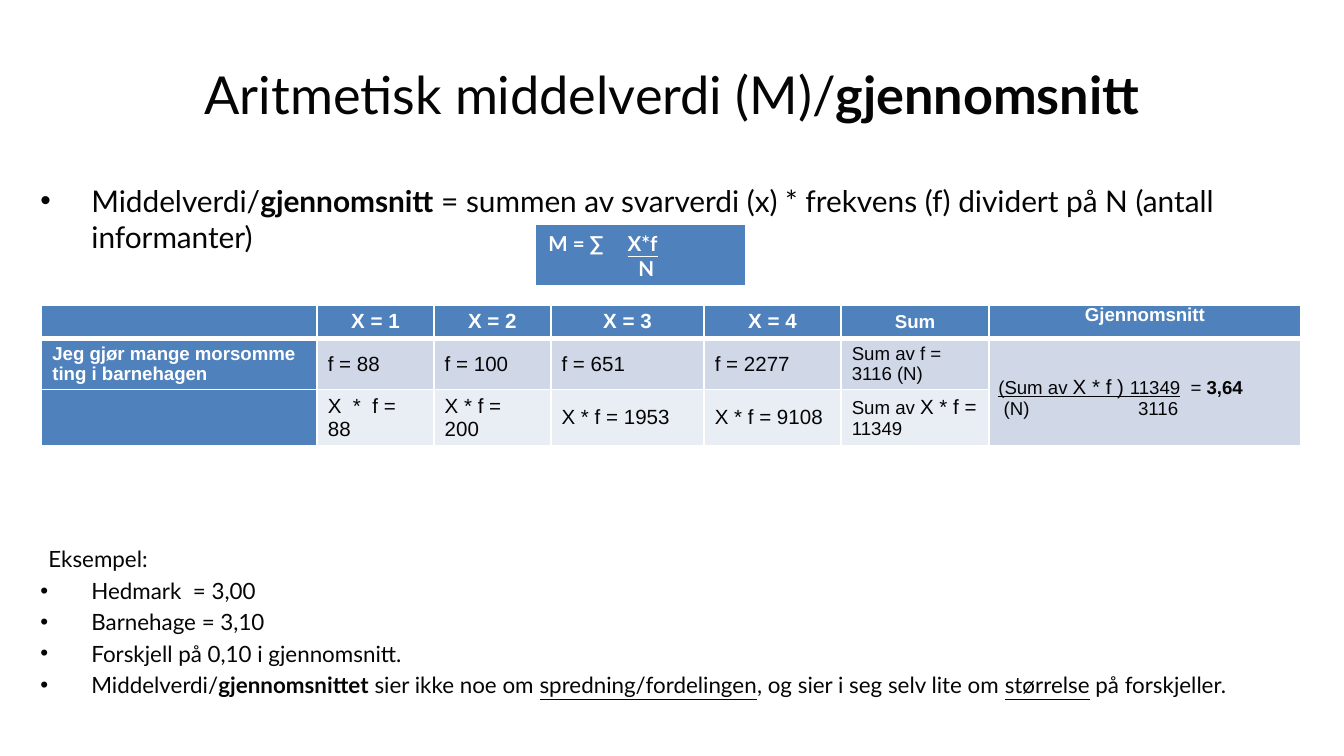
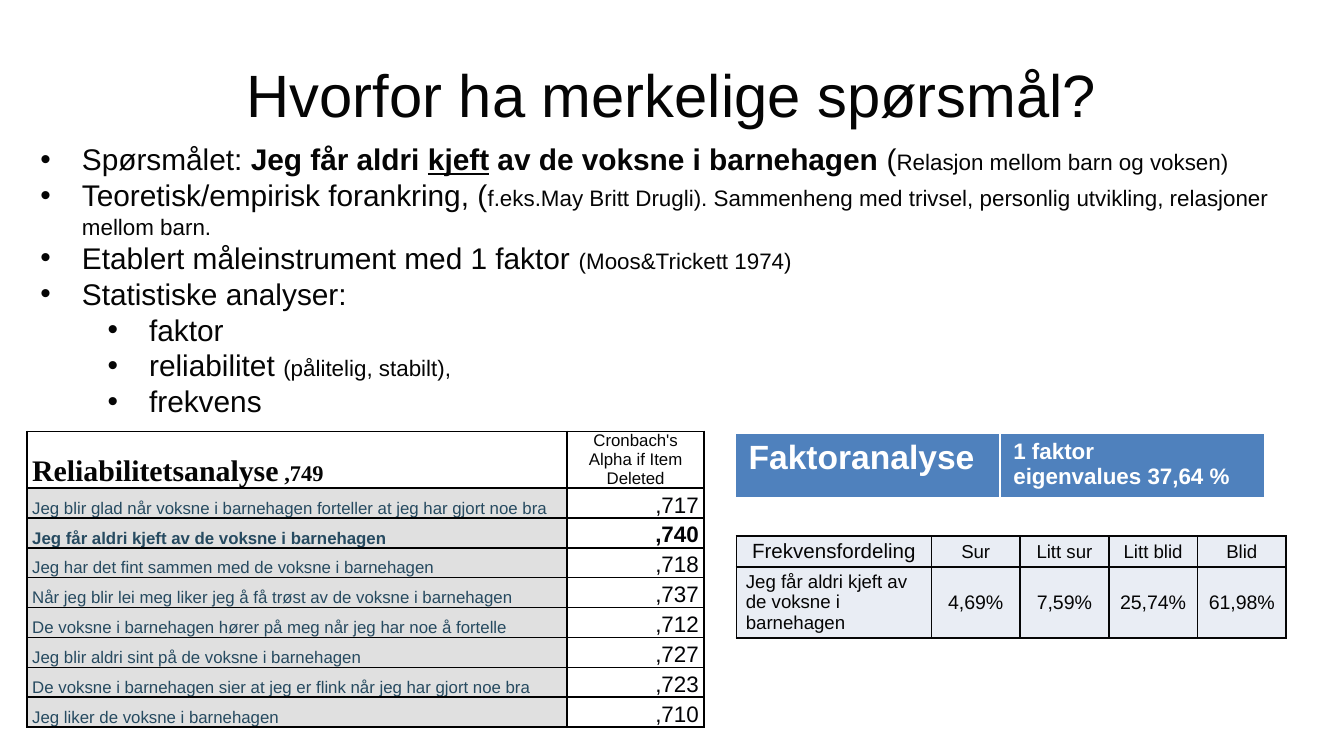
from dataclasses import dataclass

from lxml.etree import SubElement
from pptx import Presentation
from pptx.dml.color import RGBColor
from pptx.enum.text import MSO_ANCHOR, MSO_AUTO_SIZE, PP_ALIGN
from pptx.oxml.ns import qn
from pptx.util import Inches, Pt

COLORS = {
    "ink": "050505", "white": "FFFFFF", "black": "000000", "blue": "4F81BD",
    "band": "D0D8E8", "pale": "E9EDF4", "grey": "E0E0E0",
    "label": "264A60", "value": "010205",
}
BOLD = {"bold": True}
LINE = {"underline": True}
SMALL = {"size": 12}
CENTER, RIGHT = PP_ALIGN.CENTER, PP_ALIGN.RIGHT
MIDDLE, BOTTOM, TOP = MSO_ANCHOR.MIDDLE, MSO_ANCHOR.BOTTOM, MSO_ANCHOR.TOP


@dataclass
class Para:
    """A paragraph: spans are strings or (string, style) pairs."""
    spans: list
    bullet: bool = False
    left: float = 0
    hang: float = 0
    level: int = 0
    before: float = 0
    size: float = 0


# Content: mean slide
MEAN_TITLE = ["Aritmetisk middelverdi (M)/", ("gjennomsnitt", BOLD)]
MEAN_INTRO = ["Middelverdi/", ("gjennomsnitt", BOLD),
              " = summen av svarverdi (x) * frekvens (f) dividert på N (antall informanter)"]
MEAN_EXAMPLES = [
    ["Hedmark  = 3,00"],
    ["Barnehage = 3,10"],
    ["Forskjell på 0,10 i gjennomsnitt."],
    ["Middelverdi/", ("gjennomsnittet", BOLD), " sier ikke noe om ",
     ("spredning/fordelingen", LINE), ", og sier i seg selv lite om ",
     ("størrelse", LINE), " på forskjeller."],
]
FORMULA = [Para(["M = ∑\t", ("X*f", LINE)], left=0.09, hang=0.09),
           Para(["N"], left=0.67)]
MEAN_HEADER = ["", "X = 1", "X = 2", "X = 3", "X = 4", "Sum", "Gjennomsnitt"]
MEAN_ROWS = [
    ["Jeg gjør mange morsomme ting i barnehagen",
     "f = 88", "f = 100", "f = 651", "f = 2277", "Sum av f = 3116 (N)"],
    ["", "X  *  f = 88", "X * f = 200", "X * f = 1953", "X * f = 9108",
     [Para(["Sum av ", ("X * f = ", {"size": 11}), "11349"])]],
]
MEAN_RESULT = [
    Para([("(Sum av ", LINE), ("X * f ) ", {"underline": True, "size": 11}),
          ("11349", LINE), "  = ", ("3,64", BOLD)]),
    Para(["(N)\t\t3116"], left=0.04),
]

# Content: question slide
QUESTION_TITLE = ["Hvorfor ha merkelige spørsmål?"]
QUESTION_POINTS = [
    (0, ["Spørsmålet: ", ("Jeg får aldri ", BOLD), ("kjeft", {**BOLD, **LINE}),
         (" av de voksne i barnehagen", BOLD), " (",
         ("Relasjon mellom barn og voksen)", SMALL)]),
    (0, ["Teoretisk/empirisk forankring, (",
         ("f.eks.May Britt Drugli). Sammenheng med trivsel, personlig utvikling, "
          "relasjoner mellom barn.", SMALL)]),
    (0, ["Etablert måleinstrument med 1 faktor ", ("(Moos&Trickett 1974)", SMALL)]),
    (0, ["Statistiske analyser:"]),
    (1, ["faktor"]),
    (1, ["reliabilitet ", ("(pålitelig, stabilt),", SMALL)]),
    (1, ["frekvens"]),
]
RELIABILITY_TITLE = [Para([("Reliabilitetsanalyse", {"size": 16}), " ,749"])]
RELIABILITY_COLUMN = "Cronbach's Alpha if Item Deleted"
STRESSED_ITEM = "Jeg får aldri kjeft av de voksne i barnehagen"
RELIABILITY = [
    ("Jeg blir glad når voksne i barnehagen forteller at jeg har gjort noe bra", ",717"),
    (STRESSED_ITEM, ",740"),
    ("Jeg har det fint sammen med de voksne i barnehagen", ",718"),
    ("Når jeg blir lei meg liker jeg å få trøst av de voksne i barnehagen", ",737"),
    ("De voksne i barnehagen hører på meg når jeg har noe å fortelle", ",712"),
    ("Jeg blir aldri sint på de voksne i barnehagen", ",727"),
    ("De voksne i barnehagen sier at jeg er flink når jeg har gjort noe bra", ",723"),
    ("Jeg liker de voksne i barnehagen", ",710"),
]
FACTOR = ("Faktoranalyse", [Para(["1 faktor"]), Para(["eigenvalues 37,64 %"])])
FREQUENCY = [
    ["Frekvensfordeling", "Sur", "Litt sur", "Litt blid", "Blid"],
    [STRESSED_ITEM, "4,69%", "7,59%", "25,74%", "61,98%"],
]


# Text helpers
def color(name):
    return RGBColor.from_string(COLORS[name])


def write(frame, paras, font="Arial", size=10, ink="ink", bold=False,
          align=None, spacing=None):
    for index, item in enumerate(paras):
        para = frame.paragraphs[0] if index == 0 else frame.add_paragraph()
        para.level = item.level
        para.space_before = Pt(item.before)
        if align is not None:
            para.alignment = align
        if spacing:
            para.line_spacing = spacing
        props = para._p.get_or_add_pPr()
        props.set("marL", str(Inches(item.left)))
        props.set("indent", str(Inches(-item.hang)))
        if item.bullet:
            SubElement(props, qn("a:buFont"), typeface="Arial")
            SubElement(props, qn("a:buChar"), char="•")
        else:
            SubElement(props, qn("a:buNone"))
        for entry in item.spans:
            text, style = (entry, {}) if isinstance(entry, str) else entry
            span = para.add_run()
            span.text = text
            span.font.name = font
            span.font.size = Pt(style.get("size", item.size or size))
            span.font.bold = style.get("bold", bold)
            span.font.underline = style.get("underline", False)
            span.font.color.rgb = color(ink)
        if not item.spans:
            SubElement(para._p, qn("a:endParaRPr"), sz=str(size * 100))


def place(shape, left, top, width, height):
    shape.left, shape.top = Inches(left), Inches(top)
    shape.width, shape.height = Inches(width), Inches(height)


def add_page(deck, title, font, title_size, body_box):
    """Add a page with its title and return it with its body frame."""
    page = deck.slides.add_slide(deck.slide_layouts[1])
    place(page.shapes.title, 0.5, 0.23, 9, 0.94)
    body = page.placeholders[1]
    place(body, *body_box)
    for shape in (page.shapes.title, body):
        shape.text_frame.word_wrap = True
        shape.text_frame.auto_size = MSO_AUTO_SIZE.NONE
    page.shapes.title.text_frame.vertical_anchor = MIDDLE
    write(page.shapes.title.text_frame, [Para(title)], font, title_size, align=CENTER)
    return page, body.text_frame


# Table helpers
def add_grid(page, left, top, widths, heights):
    grid = page.shapes.add_table(len(heights), len(widths), Inches(left), Inches(top),
                                 Inches(sum(widths)), Inches(sum(heights))).table
    grid.first_row = grid.horz_banding = False
    for column, width in zip(grid.columns, widths):
        column.width = Inches(width)
    for row, height in zip(grid.rows, heights):
        row.height = Inches(height)
    return grid


def fill_cell(cell, content, fill, border="white", bottom=1, top=1, anchor=MIDDLE,
              margins=(0.07, 0.03), **style):
    props = cell._tc.get_or_add_tcPr()
    for side, width in (("L", 1), ("R", 1), ("T", top), ("B", bottom)):
        edge = SubElement(props, qn(f"a:ln{side}"), w=str(Pt(width)))
        solid = SubElement(edge, qn("a:solidFill"))
        SubElement(solid, qn("a:srgbClr"), val=COLORS[border])
    cell.fill.solid()
    cell.fill.fore_color.rgb = color(fill)
    cell.vertical_anchor = anchor
    cell.margin_left = cell.margin_right = Inches(margins[0])
    cell.margin_top = cell.margin_bottom = Inches(margins[1])
    if isinstance(content, str):
        content = [Para([content] if content else [])]
    write(cell.text_frame, content, **style)


def build_mean_page(deck):
    page, body = add_page(deck, MEAN_TITLE, "Lato", 28, (0.2, 1.31, 9.61, 3.71))
    # The space before the examples leaves room for the tables
    examples = [Para(spans, True, 0.38, 0.38, before=2.4, size=12)
                for spans in MEAN_EXAMPLES]
    write(body, [Para(MEAN_INTRO, True, 0.38, 0.38),
                 Para(["Eksempel:"], left=0.06, before=156, size=12)] + examples,
          "Lato", 16)

    # Frequency and sum table
    grid = add_grid(page, 0.31, 2.27, [2.05, 0.87, 0.87, 1.14, 1.02, 1.1, 2.32],
                    [0.23, 0.38, 0.42])
    last = len(MEAN_HEADER) - 1
    for col, text in enumerate(MEAN_HEADER):
        fill_cell(grid.cell(0, col), text, "blue", bottom=3, ink="white", bold=True,
                  align=CENTER, size=11 if col < 5 else 10,
                  anchor=TOP if col == last else MIDDLE,
                  margins=(0.08, 0 if col == last else 0.03))
    for row, (texts, fill) in enumerate(zip(MEAN_ROWS, ("band", "pale")), 1):
        for col, text in enumerate(texts):
            label = col == 0
            fill_cell(grid.cell(row, col), text, "blue" if label else fill,
                      top=3 if row == 1 else 1, ink="white" if label else "ink",
                      bold=label, size=11 if 0 < col < 5 else 10,
                      margins=(0.08, 0.03))
    result = grid.cell(1, last)
    result.merge(grid.cell(2, last))
    fill_cell(result, MEAN_RESULT, "band", top=3)
    result.margin_top = Inches(0.11)

    # Formula
    formula = add_grid(page, 3.98, 1.67, [1.57], [0.47])
    fill_cell(formula.cell(0, 0), FORMULA, "blue", bottom=3, anchor=TOP,
              margins=(0.1, 0.05), font="Lato", size=11, ink="white", bold=True)


def build_question_page(deck):
    page, body = add_page(deck, QUESTION_TITLE, "Arial", 32, (0.2, 1, 9.53, 2.19))
    write(body, [Para(spans, True, 0.31 + 0.5 * level, 0.31, level)
                 for level, spans in QUESTION_POINTS], size=16)

    # Frequency distribution
    grid = add_grid(page, 5.48, 3.99, [1.45] + [0.66] * 4, [0.22, 0.52])
    for row, texts in enumerate(FREQUENCY):
        for col, text in enumerate(texts):
            size = 11 if row == col == 0 else 10.5 if row and col else 10
            fill_cell(grid.cell(row, col), text, "pale", "ink", size=size,
                      align=None if row and not col else CENTER)

    # Reliability analysis
    grid = add_grid(page, 0.2, 3.21, [4.02, 1.02], [0.42] + [0.22] * len(RELIABILITY))
    tight = {"border": "black", "margins": (0.04, 0)}
    fill_cell(grid.cell(0, 0), RELIABILITY_TITLE, "white", anchor=BOTTOM,
              font="Times New Roman", size=12, bold=True, **tight)
    fill_cell(grid.cell(0, 1), RELIABILITY_COLUMN, "white", anchor=BOTTOM,
              size=9, align=CENTER, **tight)
    for row, (item, alpha) in enumerate(RELIABILITY, 1):
        shared = {**tight, "anchor": TOP, "spacing": Pt(16),
                  "bold": item == STRESSED_ITEM}
        fill_cell(grid.cell(row, 0), item, "grey", size=9, ink="label", **shared)
        fill_cell(grid.cell(row, 1), alpha, "white", size=12, ink="value",
                  align=RIGHT, **shared)

    # Factor analysis
    grid = add_grid(page, 5.47, 3.22, [1.97] * 2, [0.5])
    for col, (content, size) in enumerate(zip(FACTOR, (18, 12))):
        fill_cell(grid.cell(0, col), content, "blue", bottom=3, anchor=TOP,
                  margins=(0.1, 0.05), size=size, ink="white", bold=True)


def main():
    deck = Presentation()
    # Widescreen, 16:9
    deck.slide_width = Inches(10)
    deck.slide_height = deck.slide_width * 9 // 16
    build_mean_page(deck)
    build_question_page(deck)
    deck.save("out.pptx")


if __name__ == "__main__":
    main()
